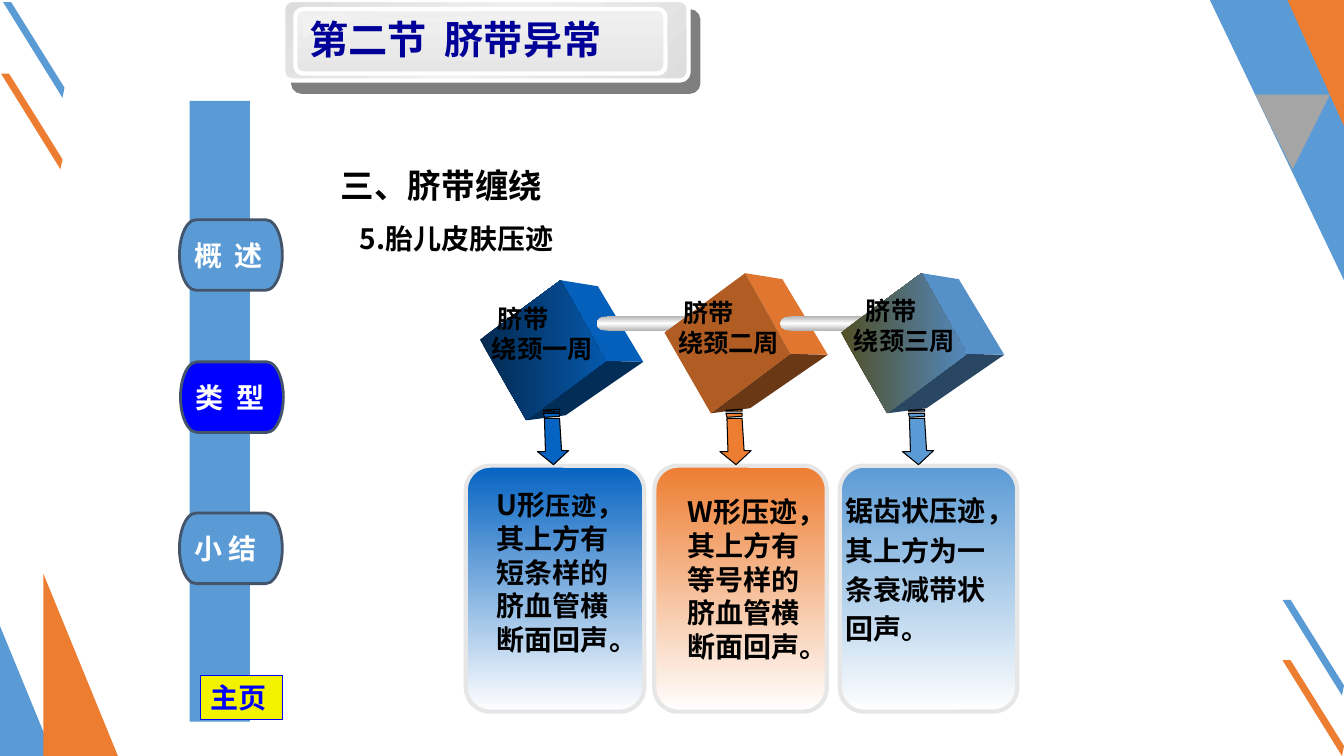
from lxml import etree
from pptx import Presentation
from pptx.dml.color import RGBColor
from pptx.enum.shapes import MSO_SHAPE
from pptx.enum.text import MSO_ANCHOR, PP_ALIGN
from pptx.oxml.ns import qn
from pptx.util import Inches, Pt

RECT, ROUND = MSO_SHAPE.RECTANGLE, MSO_SHAPE.ROUNDED_RECTANGLE
OVAL, PILL = MSO_SHAPE.OVAL, MSO_SHAPE.FLOWCHART_TERMINATOR
TRI = MSO_SHAPE.ISOSCELES_TRIANGLE
TOP, MIDDLE, LEFT = MSO_ANCHOR.TOP, MSO_ANCHOR.MIDDLE, PP_ALIGN.LEFT
SANS, SERIF, ARIAL = "Noto Sans CJK SC", "Times New Roman", "Arial"
BLUE, ORANGE, NAVY, GREY = "5B9BD5", "ED7D31", "0563C1", "E7E6E6"
WHITE, BLACK, PURE = "FFFFFF", "000000", "0000FF"
STEEL = ("B6B6B6", WHITE, "B6B6B6")


def color(code):
    return RGBColor.from_string(code)


def sub(parent, tag, **attrs):
    return etree.SubElement(parent, qn("a:" + tag), attrs)


def shade(shape, stops, angle):
    """Even gradient stops; a fourth pair of digits gives the alpha."""
    shape.fill.gradient()
    grad = shape._element.spPr.find(qn("a:gradFill"))
    grad.find(qn("a:lin")).set("ang", str(angle * 60000))
    track = grad.find(qn("a:gsLst"))
    for old in list(track):
        track.remove(old)
    for i, code in enumerate(stops):
        stop = sub(track, "gs", pos=str(100000 * i // (len(stops) - 1)))
        tint = sub(stop, "srgbClr", val=code[:6])
        if len(code) == 8:
            sub(tint, "alpha", val=str(int(code[6:], 16) * 100000 // 255))


def paint(shape, fill, line=None, width=1, angle=90):
    shape.shadow.inherit = False
    if isinstance(fill, str):
        shape.fill.solid()
        shape.fill.fore_color.rgb = color(fill)
    else:
        shade(shape, fill, angle)
    if line:
        shape.line.color.rgb = color(line)
        shape.line.width = Pt(width)
    else:
        shape.line.fill.background()
    return shape


def block(slide, kind, box, fill, line=None, width=1, angle=90, adj=None):
    shape = slide.shapes.add_shape(kind, *map(Inches, box))
    if adj is not None:
        shape.adjustments[0] = adj
    return paint(shape, fill, line, width, angle)


def outline(slide, x, y, paths, fill, line=None, width=1, angle=90):
    """Closed outlines, with points relative to (x, y)."""
    paths = [[(Inches(x + a), Inches(y + b)) for a, b in path]
             for path in paths]
    form = slide.shapes.build_freeform(*paths[0][0])
    for i, path in enumerate(paths):
        if i:
            form.move_to(*path[0])
        form.add_line_segments(path[1:], close=True)
    return paint(form.convert_to_shape(), fill, line, width, angle)


def style(para, size, font=SANS, ink=BLACK):
    para.alignment = LEFT
    face = para.font
    face.size, face.bold, face.name = Pt(size), True, font
    face.color.rgb = color(ink)
    sub(para._p.pPr.find(qn("a:defRPr")), "ea", typeface=SANS)


def indent(para, left, first=0):
    prop = para._p.get_or_add_pPr()
    prop.set("marL", str(Inches(left)))
    prop.set("indent", str(Inches(first)))


def write(shape, lines, size, font=SANS, ink=BLACK, anchor=TOP, wrap=True):
    frame = shape.text_frame
    frame.word_wrap, frame.vertical_anchor = wrap, anchor
    frame.text = "\n".join(lines)
    for para in frame.paragraphs:
        style(para, size, font, ink)
    return frame.paragraphs


def label(slide, box, lines, size, font=SANS):
    area = slide.shapes.add_textbox(*map(Inches, box))
    return write(area, lines, size, font, wrap=False)


def place(holder, box):
    holder.left, holder.top, holder.width, holder.height = map(Inches, box)


# Corner ornaments
def decor(slide, wide, high):
    streak = [(0, 0), (.08, 0), (.61, .85), (.59, .95)]
    for x, y, fill in ((12.72, 5.95, BLUE), (.01, .73, ORANGE),
                       (.03, .02, BLUE), (12.72, 6.55, ORANGE)):
        outline(slide, x, y, [streak], fill)
    outline(slide, wide, 0, [[(-1.33, 0), (0, 0), (0, 2.78)]], BLUE)
    outline(slide, wide, 0, [[(-.56, 0), (0, 0), (0, 1.25)]], ORANGE)
    outline(slide, 12.45, .94, [[(0, 0), (.74, 0), (.37, .74)]], "A5A5A5")
    block(slide, TRI, (0, high - 1.29, .53, 1.29), BLUE, adj=0)
    block(slide, TRI, (.43, high - 1.81, .74, 1.81), ORANGE, adj=0)


# Title plate with a hard shadow
def banner(slide, x, y, w, h):
    plate = block(slide, ROUND, (x, y, w, h), ("DDDDDD", "EFEFEF", "DDDDDD"),
                  WHITE, 3, 45, .109)
    cast = sub(plate._element.spPr.find(qn("a:effectLst")), "outerShdw",
               blurRad="0", dist=str(Pt(10.6)), dir=str(49 * 60000),
               algn="ctr", rotWithShape="0")
    sub(sub(cast, "srgbClr", val=BLACK), "alpha", val="50000")
    block(slide, ROUND, (x + .12, y + .09, w - .35, h - .16),
          ("F0F0F0", GREY), WHITE, 3, adj=.119)
    gloss = [(.41, 0), (.12, .02), (0, .05), (0, .23), (.1, .18), (.2, .12),
             (.56, .07), (1.2, .03), (2.06, 0)]
    outline(slide, x + .2, y + .14, [gloss], ("F4F3F3", GREY + "00"), angle=45)
    title = slide.shapes.title
    place(title, (x + .16, y + .1, w - .46, .58))
    write(title, ["第二节  脐带异常"], 28, ink="000099")
    slide.shapes._spTree.append(title._element)


# Heading and subheading
def heading(slide, box):
    body = slide.placeholders[1]
    place(body, box)
    paras = write(body, ["三、脐带缠绕", "5.胎儿皮肤压迹"], 24)
    for para, size, left in zip(paras, (24, 20), (0, .19)):
        para.font.size = Pt(size)
        para.line_spacing, para.space_before = 1.3, Pt(size * .2)
        indent(para, left)
        para._p.pPr.insert(2, etree.Element(qn("a:buNone")))


# Side menu
def menu(slide, x, y, w, h):
    block(slide, RECT, (x, y, w, h), BLUE)
    home = block(slide, RECT, (x + .11, y + 5.7, .81, .44), "F3F300", PURE, .75)
    write(home, ["主页"], 20, ARIAL, PURE)
    for dx, dy, word, fill in ((-.1, 1.18, "概  述", BLUE),
                               (-.09, 2.59, "类  型", PURE),
                               (-.1, 4.09, "小 结", BLUE)):
        item = block(slide, PILL, (x + dx, y + dy, 1.02, .7), fill, "44546A", 2)
        write(item, [word], 20, ARIAL, WHITE, MIDDLE)


# Solid cube: front, side and base faces, from its left corner
def cube(slide, x, y, front, side, base):
    left, top, low, mid = (0, 0), (.8, -.59), (.46, .8), (1.25, .21)
    back, right, foot = (1.17, -.53), (1.62, .22), (.85, .75)
    outline(slide, x, y, [[low, mid, right, foot]], base)
    outline(slide, x, y, [[top, back, right, mid]], side)
    outline(slide, x, y, [[left, top, mid, low]], front, angle=0)


# Steel rod between two cubes
def rod(slide, x, y):
    block(slide, OVAL, (x, y, .17, .14), STEEL)
    block(slide, RECT, (x + .1, y, .82, .14), STEEL)


def arrow(slide, x, y, fill):
    head = [(.31, .41), (.24, .41), (.22, .09), (.07, .09), (.08, .42),
            (0, .42), (.16, .55)]
    bar = [(.22, .04), (.06, .04), (.07, .08), (.22, .07)]
    slit = [(.22, 0), (.06, .01), (.06, .02), (.22, .02)]
    outline(slide, x, y, [head, bar, slit], fill, BLACK, .75)


# Cards, cubes and arrows
def chain(slide, x, y):
    cards = ((0, 1.77, NAVY), (1.87, 1.71, ORANGE), (3.71, 1.76, BLUE))
    for dx, wide, fill in cards:
        block(slide, ROUND, (x + dx, y + 1.85, wide, 2.44), (fill, WHITE),
              GREY, 3, adj=.137)

    cubes = ((.14, .6, ("04294F", "0558AB"), "0560BC", "022D57"),
             (1.97, .53, "B05C22", "E07630", "6B3816"),
             (3.72, .53, ("514F26", "5288BD"), "5591C8", "294663"))
    for i, (dx, dy, *faces) in enumerate(cubes):
        cube(slide, x + dx, y + dy, *faces)
        if i < 2:
            rod(slide, x + 1.3 + 1.82 * i, y + .37)

    names = ((.16, .19, .06, "一"), (2.01, .13, .05, "二"), (3.75, .11, .12, "三"))
    for dx, dy, shift, count in names:
        paras = label(slide, (x + dx, y + dy, 1.2, .71),
                      ["脐带", f"绕颈{count}周"], 18, SERIF)
        indent(paras[0], shift)

    notes = ((.21, 2.02, "U形", "短条样的", 18), (2.1, 2.09, "W形", "等号样的", 20))
    for dx, dy, form, echo, size in notes:
        paras = label(slide, (x + dx, y + dy, 1.6, 1.77),
                      [form, "其上方有", echo, "脐血管横", "断面回声。"], 20)
        mark = paras[0].add_run()
        mark.text, mark.font.size, mark.font.name = "压迹", Pt(size), SERIF
        paras[0].add_run().text = "，"
    last = label(slide, (x + 3.67, y + 2.08, 1.88, 1.7),
                 ["锯齿状压迹，", "其上方为一", "条衰减带状", "回声。"], 20, SERIF)
    for para in last:
        para.space_after = Pt(4)

    for i, fill in enumerate((NAVY, ORANGE, BLUE)):
        arrow(slide, x + .71 + 1.81 * i, y + 1.29, fill)


def main():
    deck = Presentation()
    wide, high = 13.33, 7.5
    deck.slide_width, deck.slide_height = Inches(wide), Inches(high)
    slide = deck.slides.add_slide(deck.slide_layouts[1])
    decor(slide, wide, high)
    heading(slide, (3.28, 1.47, 7.6, 1.34))
    banner(slide, 2.81, 0, 4.02, .8)
    menu(slide, 1.88, 1, .6, 6.16)
    chain(slide, 4.62, 2.77)
    deck.save("out.pptx")


if __name__ == "__main__":
    main()
